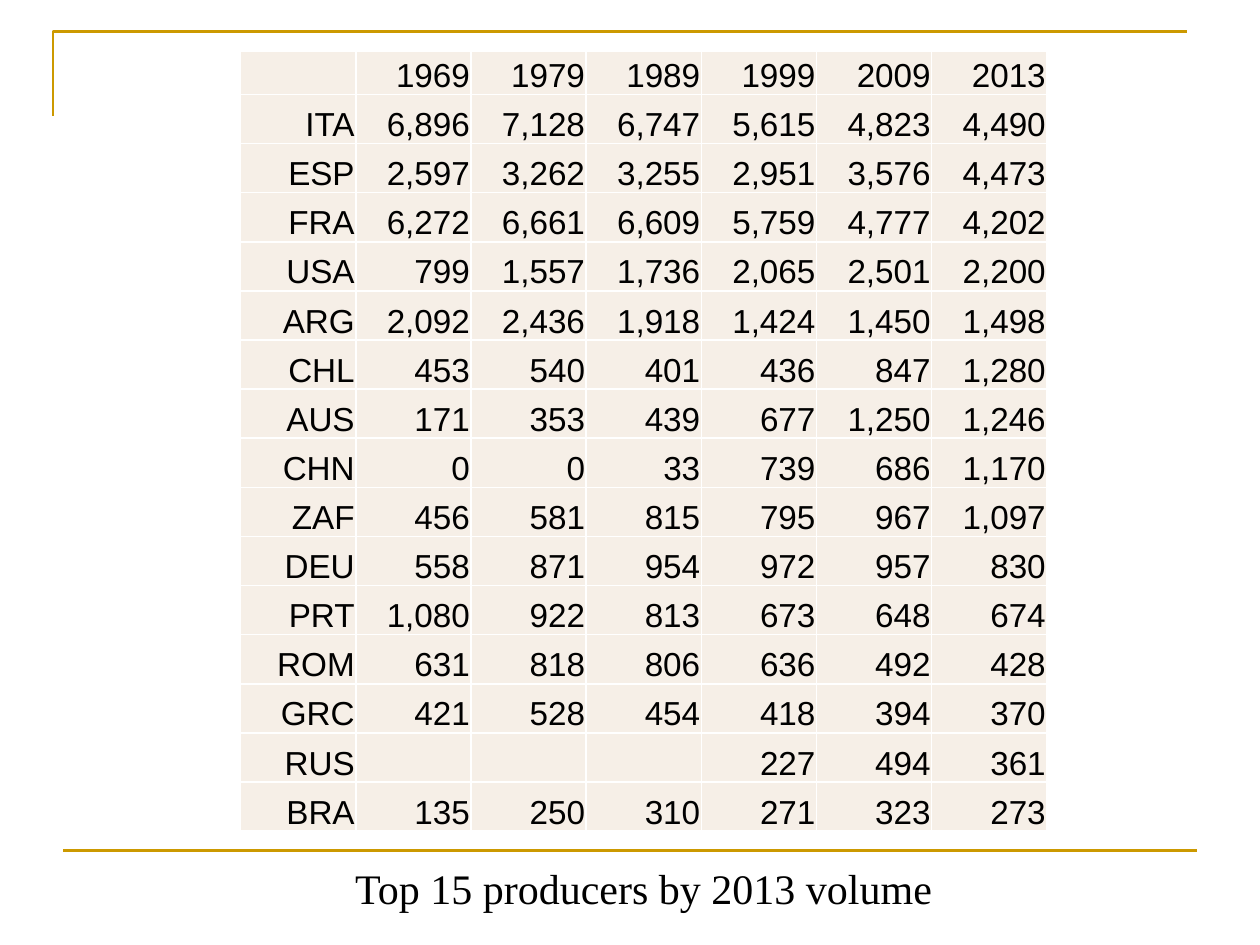
"""Build a slide with a table of the top 15 producers by 2013 volume."""
import dataclasses

import lxml.etree
import pptx
import pptx.dml.color
import pptx.enum.shapes
import pptx.enum.text
import pptx.oxml.ns
import pptx.util

Inches = pptx.util.Inches
Pt = pptx.util.Pt
RGBColor = pptx.dml.color.RGBColor
Align = pptx.enum.text.PP_ALIGN
qn = pptx.oxml.ns.qn


@dataclasses.dataclass(frozen=True)
class Theme:
    gold: str = "CC9900"
    cell: str = "F6EFE7"
    border: str = "FFFFFF"
    text: str = "000000"
    table_font: str = "Arial"
    caption_font: str = "Times New Roman"
    table_size: int = 19
    caption_size: int = 24
    rule_width: float = 1.5
    border_width: float = 1


theme = Theme()


def write_text(text_frame, text, *, font, size, color=theme.text, align=Align.LEFT):
    paragraph = text_frame.paragraphs[0]
    paragraph.alignment = align
    run = paragraph.add_run()
    run.text = text
    run.font.name = font
    run.font.size = Pt(size)
    run.font.color.rgb = RGBColor.from_string(color)


def add_borders(cell, color, width):
    properties = cell._tc.get_or_add_tcPr()
    for side in ("a:lnL", "a:lnR", "a:lnT", "a:lnB"):
        line = lxml.etree.SubElement(properties, qn(side), w=str(Pt(width)))
        fill = lxml.etree.SubElement(line, qn("a:solidFill"))
        lxml.etree.SubElement(fill, qn("a:srgbClr"), val=color)


presentation = pptx.Presentation()
presentation.slide_width = Inches(10)
presentation.slide_height = Inches(7.5)
slide = presentation.slides.add_slide(presentation.slide_layouts[6])

builder = slide.shapes.build_freeform(Inches(0.42), Inches(0.92))
builder.add_line_segments(
    [(Inches(0.42), Inches(0.25)), (Inches(9.42), Inches(0.25))], close=False
)
corner_rule = builder.convert_to_shape()
corner_rule.shadow.inherit = False
corner_rule.fill.background()

bottom_rule = slide.shapes.add_connector(
    pptx.enum.shapes.MSO_CONNECTOR.STRAIGHT,
    Inches(0.5), Inches(6.75), Inches(9.5), Inches(6.75),
)
lxml.etree.SubElement(bottom_rule._element.spPr, qn("a:effectLst"))

for rule in (corner_rule, bottom_rule):
    rule.line.color.rgb = RGBColor.from_string(theme.gold)
    rule.line.width = Pt(theme.rule_width)
lxml.etree.SubElement(
    bottom_rule._element.spPr, qn("a:effectLst")
) if bottom_rule._element.spPr.find(qn("a:effectLst")) is None else None

years = ["", "1969", "1979", "1989", "1999", "2009", "2013"]
producers = [
    ("ITA", 6896, 7128, 6747, 5615, 4823, 4490),
    ("ESP", 2597, 3262, 3255, 2951, 3576, 4473),
    ("FRA", 6272, 6661, 6609, 5759, 4777, 4202),
    ("USA", 799, 1557, 1736, 2065, 2501, 2200),
    ("ARG", 2092, 2436, 1918, 1424, 1450, 1498),
    ("CHL", 453, 540, 401, 436, 847, 1280),
    ("AUS", 171, 353, 439, 677, 1250, 1246),
    ("CHN", 0, 0, 33, 739, 686, 1170),
    ("ZAF", 456, 581, 815, 795, 967, 1097),
    ("DEU", 558, 871, 954, 972, 957, 830),
    ("PRT", 1080, 922, 813, 673, 648, 674),
    ("ROM", 631, 818, 806, 636, 492, 428),
    ("GRC", 421, 528, 454, 418, 394, 370),
    ("RUS", None, None, None, 227, 494, 361),
    ("BRA", 135, 250, 310, 271, 323, 273),
]
rows = [years]
for country, *volumes in producers:
    rows.append([country] + ["" if v is None else f"{v:,}" for v in volumes])

table = slide.shapes.add_table(
    len(rows), len(years), Inches(1.91), Inches(0.41), Inches(6.4), Inches(6.17)
).table
table.first_row = False
table.horz_banding = False
for column in table.columns:
    column.width = Inches(6.4 / len(years))
for row_index, values in enumerate(rows):
    table.rows[row_index].height = Inches(0.39 if row_index else 0.34)
    for column_index, value in enumerate(values):
        cell = table.cell(row_index, column_index)
        cell.margin_left = cell.margin_right = cell.margin_top = Inches(0.01)
        cell.margin_bottom = 0
        cell.vertical_anchor = pptx.enum.text.MSO_ANCHOR.BOTTOM
        add_borders(cell, theme.border, theme.border_width)
        cell.fill.solid()
        cell.fill.fore_color.rgb = RGBColor.from_string(theme.cell)
        if value:
            write_text(cell.text_frame, value, font=theme.table_font,
                       size=theme.table_size, align=Align.RIGHT)

caption = slide.shapes.add_textbox(Inches(2.72), Inches(6.8), Inches(4.82), Inches(0.5))
caption.text_frame.word_wrap = False
caption.text_frame.auto_size = pptx.enum.text.MSO_AUTO_SIZE.SHAPE_TO_FIT_TEXT
write_text(caption.text_frame, "Top 15 producers by 2013 volume",
           font=theme.caption_font, size=theme.caption_size)

presentation.save("out.pptx")
